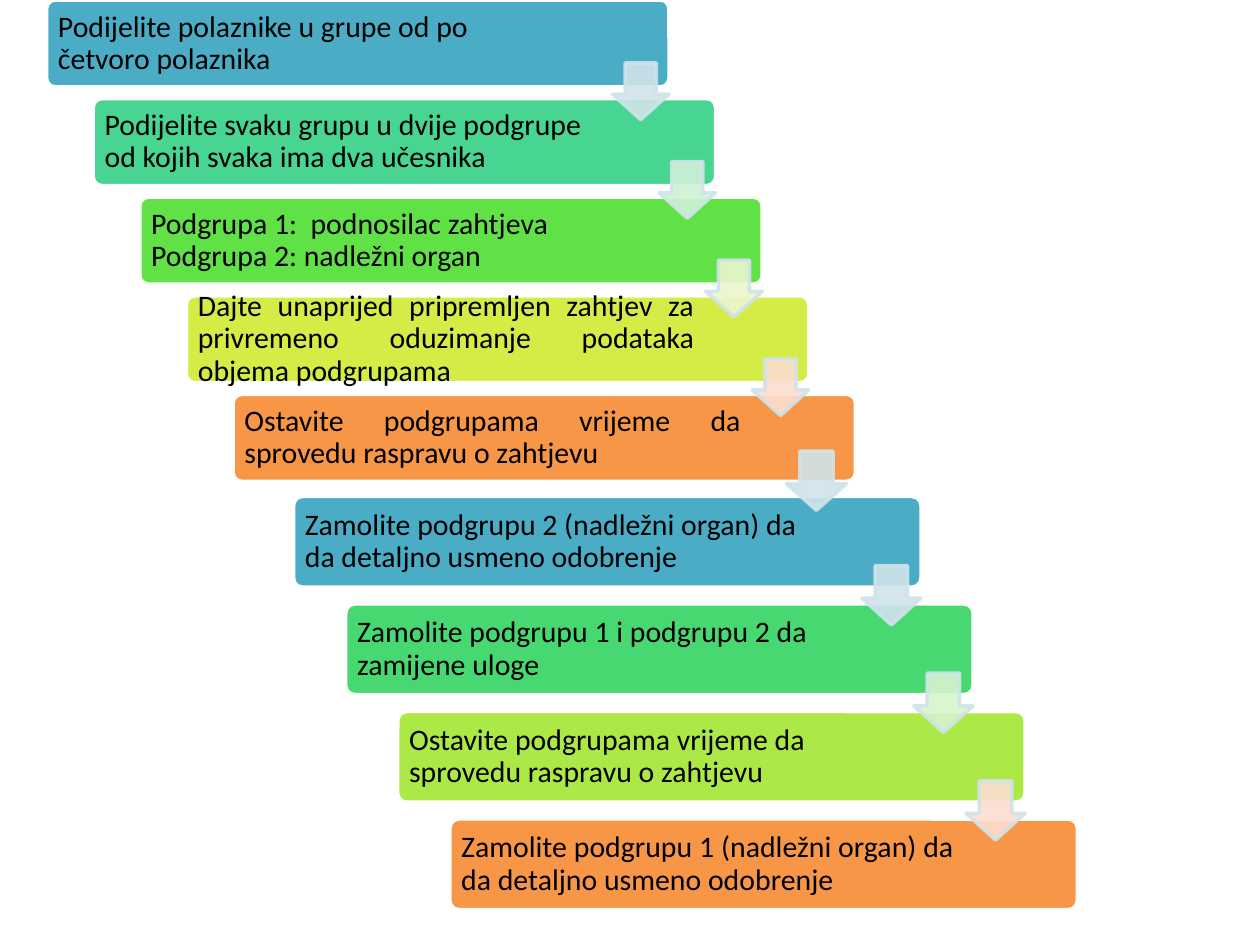
import pptx
import pptx.util
import pptx.dml.color
import pptx.enum.shapes
import pptx.enum.text
import lxml.etree

Inches = pptx.util.Inches
Pt = pptx.util.Pt
RGB = pptx.dml.color.RGBColor.from_string
KIND = pptx.enum.shapes.MSO_SHAPE
ALIGN = pptx.enum.text.PP_ALIGN

hues = {
    "blue": "4BACC6", "mint": "48D491", "green": "60E146", "yellow": "D5EC46",
    "orange": "F79646", "grass": "47D872", "lime": "ACE946",
    "ice": "D0E3EA", "pale mint": "CFF1D9", "pale yellow": "EBF7CE",
    "pale orange": "FCDDCF", "pale lime": "D6F4CE",
    "white": "FFFFFF", "black": "000000",
}

deck = pptx.Presentation()
deck.slide_width = Inches(10)
deck.slide_height = Inches(7.5)
slide = deck.slides.add_slide(deck.slide_layouts[6])


def add_form(kind, x, y, w, h, fill, edge, adjust):
    form = slide.shapes.add_shape(kind, Inches(x), Inches(y), Inches(w), Inches(h))
    form.shadow.inherit = False
    for i, value in enumerate(adjust):
        form.adjustments[i] = value
    form.fill.solid()
    form.fill.fore_color.rgb = RGB(hues[fill])
    form.line.color.rgb = RGB(hues[edge])
    form.line.width = Pt(2)
    return form


def add_arrow(x, y, w, h, fill):
    arrow = add_form(KIND.DOWN_ARROW, x, y, w, h, fill, "ice", (0.55, 0.45))
    # Fill and line are both 90% opaque
    for tint in arrow._element.spPr.iter("{*}srgbClr"):
        lxml.etree.SubElement(tint, pptx.oxml.ns.qn("a:alpha"), val="90000")


# Each step: text, fill, text width, justified, fill of the arrow below it
upper = [
    ("Podijelite polaznike u grupe od po četvoro polaznika",
     "blue", 4.12, False, "ice"),
    ("Podijelite svaku grupu u dvije podgrupe od kojih svaka ima dva učesnika",
     "mint", 4.08, False, "pale mint"),
    ("Podgrupa 1:  podnosilac zahtjeva\vPodgrupa 2: nadležni organ",
     "green", 4.08, False, "pale yellow"),
    ("Dajte unaprijed pripremljen zahtjev za privremeno oduzimanje podataka "
     "objema podgrupama", "yellow", 4.08, True, "pale orange"),
    ("Ostavite podgrupama vrijeme da sprovedu raspravu o zahtjevu",
     "orange", 4.08, True, None),
]
lower = [
    ("Zamolite podgrupu 2 (nadležni organ) da da detaljno usmeno odobrenje",
     "blue", 4.14, False, "ice"),
    ("Zamolite podgrupu 1 i podgrupu 2 da zamijene uloge",
     "grass", 4.05, False, "pale lime"),
    ("Ostavite podgrupama vrijeme da sprovedu raspravu o zahtjevu",
     "lime", 4.05, False, "pale orange"),
    ("Zamolite podgrupu 1 (nadležni organ) da da detaljno usmeno odobrenje",
     "orange", 4.05, True, None),
]

# Each stair: steps, first and last corner, step size, arrow size and drop
stairs = [
    (upper, (0.37, 0), (1.85, 3.13), (4.94, 0.69), 0.45, 0.5),
    (lower, (2.33, 3.94), (3.57, 6.5), (4.98, 0.72), 0.47, 0.55),
]

for steps, first, last, (wide, high), size, drop in stairs:
    spots = []
    for i in range(len(steps)):
        part = i / (len(steps) - 1)
        spots.append([a + (b - a) * part for a, b in zip(first, last)])

    # Steps with their text
    for (x, y), (words, fill, span, even, _) in zip(spots, steps):
        add_form(KIND.ROUNDED_RECTANGLE, x, y, wide, high, fill, "white", (0.1,))
        label = slide.shapes.add_textbox(
            Inches(x + 0.02), Inches(y + 0.02), Inches(span), Inches(high - 0.04))
        frame = label.text_frame
        frame.word_wrap = True
        frame.vertical_anchor = pptx.enum.text.MSO_ANCHOR.MIDDLE
        frame.margin_left = frame.margin_right = Inches(0.07)
        frame.margin_top = frame.margin_bottom = Inches(0.07)
        frame.text = words
        para = frame.paragraphs[0]
        para.alignment = ALIGN.JUSTIFY if even else ALIGN.LEFT
        para.line_spacing = 0.9
        for run in para.runs:
            run.font.name = "Calibri"
            run.font.size = Pt(17)
            run.font.color.rgb = RGB(hues["black"])

    # Arrows at the right edge, leading to the next step
    for (x, y), step in zip(spots[:-1], steps):
        add_arrow(x + wide - size, y + drop, size, size, step[-1])

# Arrow that joins the two stairs
add_arrow(6.24, 3.58, 0.48, 0.47, "ice")

deck.save("out.pptx")
